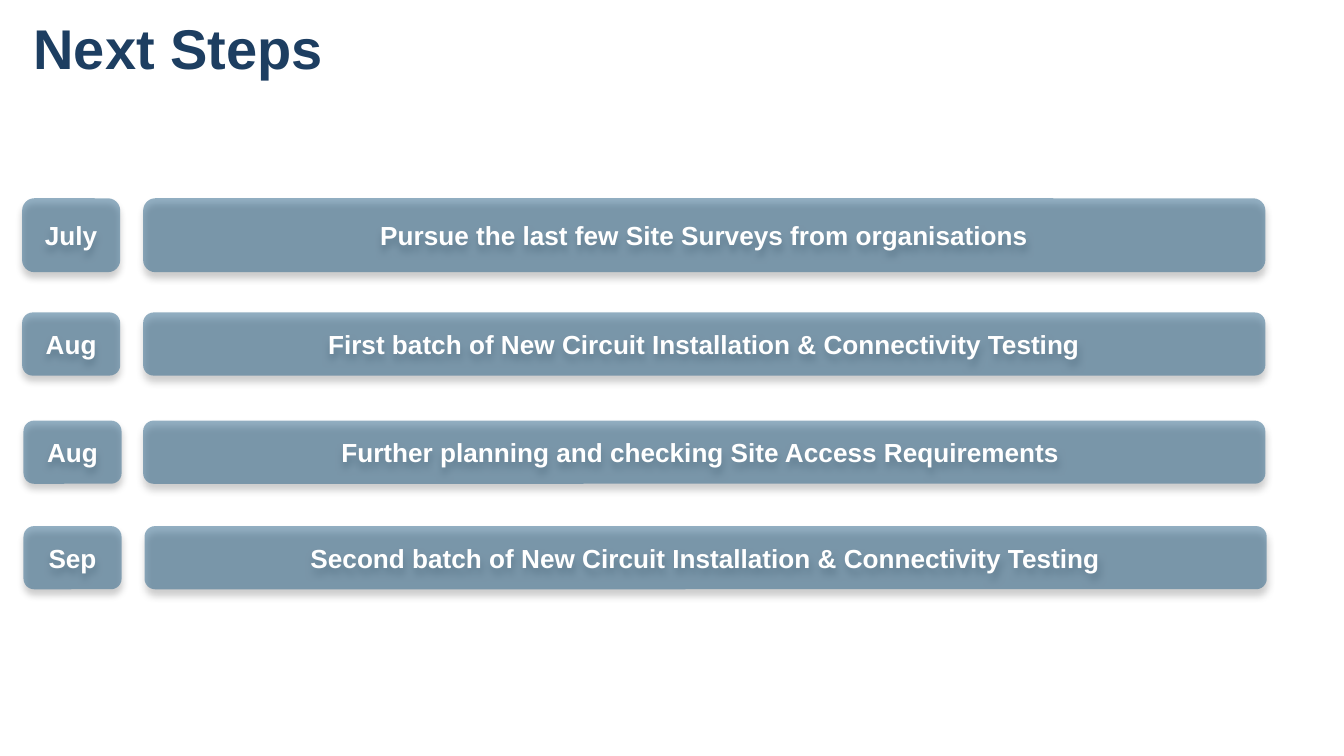
from lxml.etree import SubElement
from pptx import Presentation
from pptx.dml.color import RGBColor
from pptx.enum.shapes import MSO_SHAPE as Shape
from pptx.enum.text import MSO_ANCHOR as Anchor, PP_ALIGN as Align
from pptx.oxml.ns import qn
from pptx.util import Pt

PX = 4572
NAVY = RGBColor(0x1D, 0x3E, 0x61)
STEEL = RGBColor(0x28, 0x61, 0x87)
WHITE = RGBColor(0xFF, 0xFF, 0xFF)
TITLE_FONT = {"name": "Arial", "size": Pt(30), "bold": True}
STEP_FONT = {"name": "Arial", "size": Pt(14), "bold": True}
NO_MARGINS = dict.fromkeys(("margin_left", "margin_top", "margin_right", "margin_bottom"), 0)
SHADOW = {"blurRad": Pt(4), "dist": Pt(3), "dir": 90 * 60000, "rotWithShape": 0}

MONTH_WIDTH, ACTION_WIDTH = 146, 1670
STEPS = [
    ("July", "Pursue the last few Site Surveys from organisations", 0, 180, 0, 110),
    ("Aug", "First batch of New Circuit Installation & Connectivity Testing", 0, 180, 170, 94),
    ("Aug", "Further planning and checking Site Access Requirements ", 2, 180, 331, 94),
    ("Sep", "Second batch of New Circuit Installation & Connectivity Testing", 2, 182, 488, 94),
]


def scaled(box):
    """Turn a box in px into EMU."""
    return [length * PX for length in box]


def apply_format(target, values):
    """Set each attribute of the target from a dict."""
    for name, value in values.items():
        setattr(target, name, value)


def write(frame, words, font, color):
    """Write one vertically centred line of text."""
    apply_format(frame, {"text": words, "vertical_anchor": Anchor.MIDDLE})
    line_font = frame.paragraphs[0].runs[0].font
    apply_format(line_font, font)
    line_font.color.rgb = color


def add_title(slide, box, words):
    """Place the slide heading in its box."""
    frame = slide.shapes.add_textbox(*scaled(box)).text_frame
    apply_format(frame, {**NO_MARGINS, "word_wrap": True})
    write(frame, words, TITLE_FONT, NAVY)


def add_shadow(panel):
    """Give a panel a soft shadow straight below it."""
    panel.shadow.inherit = False
    effects = panel._element.spPr.find(qn("a:effectLst"))
    attributes = {name: str(value) for name, value in SHADOW.items()}
    outer = SubElement(effects, qn("a:outerShdw"), attributes)
    black = SubElement(outer, qn("a:srgbClr"), val="000000")
    SubElement(black, qn("a:alpha"), val="40000")


def add_panel(slide, box, words):
    """Place one translucent rounded panel with centred words."""
    panel = slide.shapes.add_shape(Shape.ROUNDED_RECTANGLE, *scaled(box))
    panel.fill.solid()
    panel.fill.fore_color.rgb = STEEL
    tint = panel._element.spPr.find(qn("a:solidFill"))[0]
    SubElement(tint, qn("a:alpha"), val="50000")
    panel.line.fill.background()
    add_shadow(panel)
    panel.text_frame.word_wrap = False
    write(panel.text_frame, words, STEP_FONT, WHITE)
    panel.text_frame.paragraphs[0].alignment = Align.CENTER


def add_steps(slide, left, top, steps):
    """Place a month panel and an action panel for each step."""
    for month, action, month_x, action_x, y, height in steps:
        add_panel(slide, (left + month_x, top + y, MONTH_WIDTH, height), month)
        add_panel(slide, (left + action_x, top + y, ACTION_WIDTH, height), action)


def main():
    """Build and save the slide."""
    deck = Presentation()
    apply_format(deck, {"slide_width": 2000 * PX, "slide_height": 1125 * PX})
    slide = deck.slides.add_slide(deck.slide_layouts[6])
    add_title(slide, (50, -9, 1900, 158), "Next Steps")
    add_steps(slide, 33, 295, STEPS)
    deck.save("out.pptx")


if __name__ == "__main__":
    main()
